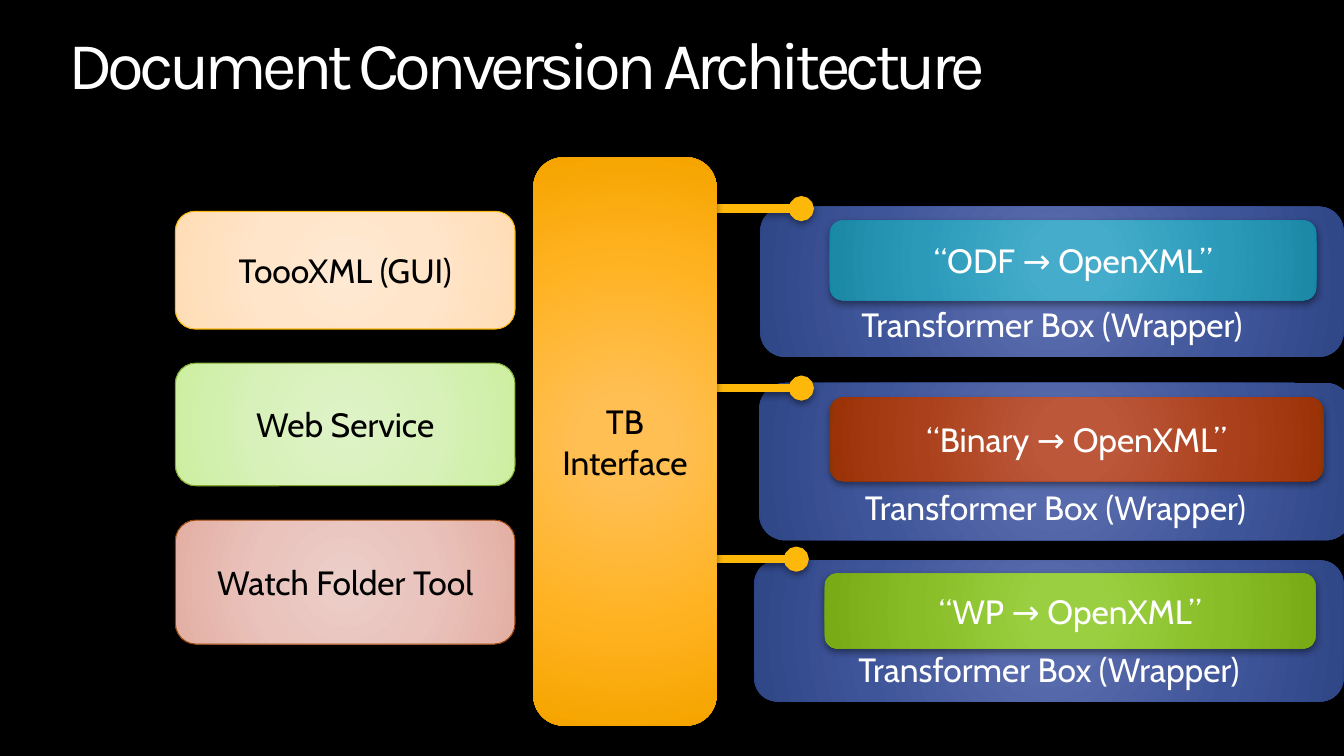
from lxml import etree
from pptx import Presentation
from pptx.dml.color import RGBColor
from pptx.enum import shapes, text
from pptx.oxml import parse_xml
from pptx.oxml.ns import nsdecls, qn
from pptx.util import Pt

COLOURS = {"background": "000000", "light": "FFFFFF", "dark": "000000", "gold": "FEB80A",
           "green edge": "84AA33", "red edge": "964305"}

# Gradient stops from the centre outwards: percent, colour
GRADIENTS = {
    "wrapper": [(0, "576BAC"), (15, "576AAB"), (62, "3F5599"), (97, "304788"), (100, "264086")],
    "teal": [(0, "45ACCC"), (15, "45ACCB"), (62, "2B9AB9"), (97, "1C8AA7"), (100, "0E89A7")],
    "rust": [(0, "BD583A"), (15, "BC573A"), (62, "AB411C"), (97, "9C3308"), (100, "7E3600")],
    "lime": [(0, "9AD041"), (15, "9ACF41"), (62, "88BD27"), (97, "79AB17"), (100, "77AC08")],
    "orange": [(0, "FFBF54"), (15, "FFBF53"), (62, "FFB221"), (97, "F6A500"), (100, "D69900")],
    "peach": [(0, "FFE9D3"), (50, "FFE5C9"), (97, "FFDDB7"), (100, "FFDBB2")],
    "mint": [(0, "DFF3C7"), (50, "D8F1BA"), (97, "CDEFA2"), (100, "CAF199")],
    "rose": [(0, "ECCEC9"), (50, "E9C3BC"), (97, "E4AFA4"), (100, "E4A89B")],
}

TITLE = "Document Conversion Architecture"
WRAPPER_LABEL = "Transformer Box (Wrapper)"
INTERFACE = ("TB\nInterface", (380.9, 112.3, 131, 406.1))

# Label, gradient, wrapper frame, converter frame, connector (from x, to x, y)
TRANSFORMERS = [
    ("“ODF → OpenXML”", "teal", (542.9, 147.6, 417, 107.3),
     (592.6, 157.5, 347.8, 57), (461.5, 572.4, 149)),
    ("“Binary → OpenXML”", "rust", (542.2, 273.6, 423.4, 112.3),
     (592.6, 283.9, 352.8, 59.8), (459.4, 572.4, 277.2)),
    ("“WP → OpenXML”", "lime", (538.6, 400.3, 421.2, 100.8),
     (589, 409.7, 350.8, 53.5), (456.5, 568.8, 399.4)),
]

# Label, gradient, edge colour, top, height
TOOLS = [
    ("ToooXML (GUI)", "peach", "gold", 151, 84),
    ("Web Service", "mint", "green edge", 259.4, 87.6),
    ("Watch Folder Tool", "rose", "red edge", 371.5, 88.6),
]
TOOL_LEFT, TOOL_WIDTH = 125.3, 242.6


def colour(name):
    return RGBColor.from_string(COLOURS[name])


def add_soft_shadow(properties):
    for old in properties.findall(qn("a:effectLst")):
        properties.remove(old)
    properties.append(parse_xml(
        f'<a:effectLst {nsdecls("a")}><a:outerShdw blurRad="{Pt(5)}" dist="{Pt(2)}" '
        'dir="5400000" rotWithShape="0"><a:srgbClr val="000000"><a:alpha val="43000"/>'
        '</a:srgbClr></a:outerShdw></a:effectLst>'))


def fill_radially(box, stops):
    stop_xml = "".join(f'<a:gs pos="{percent * 1000}"><a:srgbClr val="{value}"/></a:gs>'
                       for percent, value in stops)
    box._element.spPr.find(qn("a:prstGeom")).addnext(parse_xml(
        f'<a:gradFill {nsdecls("a")} rotWithShape="1"><a:gsLst>{stop_xml}</a:gsLst>'
        '<a:path path="circle"><a:fillToRect l="50000" t="50000" r="50000" b="50000"/>'
        '</a:path></a:gradFill>'))


def add_box(page, label, gradient, frame, ink="light", edge=None,
            anchor=text.MSO_ANCHOR.MIDDLE, side_inset=7.2):
    box = page.shapes.add_shape(shapes.MSO_SHAPE.ROUNDED_RECTANGLE, *map(Pt, frame))
    fill_radially(box, GRADIENTS[gradient])
    if edge:
        box.line.color.rgb = colour(edge)
        box.line.width = Pt(0.75)
    else:
        box.line.fill.background()
    add_soft_shadow(box._element.spPr)
    body = box.text_frame
    body.word_wrap = True
    body.vertical_anchor = anchor
    body.margin_left = body.margin_right = Pt(side_inset)
    body.text = label
    for para in body.paragraphs:
        para.alignment = text.PP_ALIGN.CENTER
        para.font.name = "Cabin"
        para.font.size = Pt(24)
        para.font.color.rgb = colour(ink)


def add_plug(page, start, end, y):
    """Draw a thick line with a round knob at each end."""
    plug = page.shapes.add_connector(shapes.MSO_CONNECTOR.STRAIGHT,
                                     Pt(start), Pt(y), Pt(end), Pt(y))
    plug.line.color.rgb = colour("gold")
    plug.line.width = Pt(6)
    for tag in ("a:headEnd", "a:tailEnd"):
        etree.SubElement(plug.line._get_or_add_ln(), qn(tag), type="oval")
    add_soft_shadow(plug._element.spPr)


def add_title(page):
    title = page.shapes.title
    title.left, title.top, title.width, title.height = map(Pt, (41.8, 18.7, 705.6, 52.6))
    title.text_frame.text = TITLE
    title.text_frame.word_wrap = True
    title.text_frame.auto_size = text.MSO_AUTO_SIZE.NONE
    title.text_frame.vertical_anchor = text.MSO_ANCHOR.TOP
    para = title.text_frame.paragraphs[0]
    para.alignment = text.PP_ALIGN.LEFT
    para.line_spacing = 0.9
    para.font.name = "Karla"
    para.font.size = Pt(48)
    para.font.color.rgb = colour("light")
    para.runs[0].font._element.set("spc", "-360")


def main():
    deck = Presentation()
    deck.slide_width, deck.slide_height = Pt(960), Pt(540)
    page = deck.slides.add_slide(deck.slide_layouts[5])
    page.background.fill.solid()
    page.background.fill.fore_color.rgb = colour("background")
    add_title(page)
    for label, gradient, wrapper, converter, plug in TRANSFORMERS:
        add_box(page, WRAPPER_LABEL, "wrapper", wrapper, anchor=text.MSO_ANCHOR.BOTTOM)
        add_box(page, label, gradient, converter)
        add_plug(page, *plug)
    label, frame = INTERFACE
    add_box(page, label, "orange", frame, ink="dark", side_inset=0)
    for label, gradient, edge, top, height in TOOLS:
        add_box(page, label, gradient, (TOOL_LEFT, top, TOOL_WIDTH, height), "dark", edge)
    deck.save("out.pptx")


if __name__ == "__main__":
    main()
